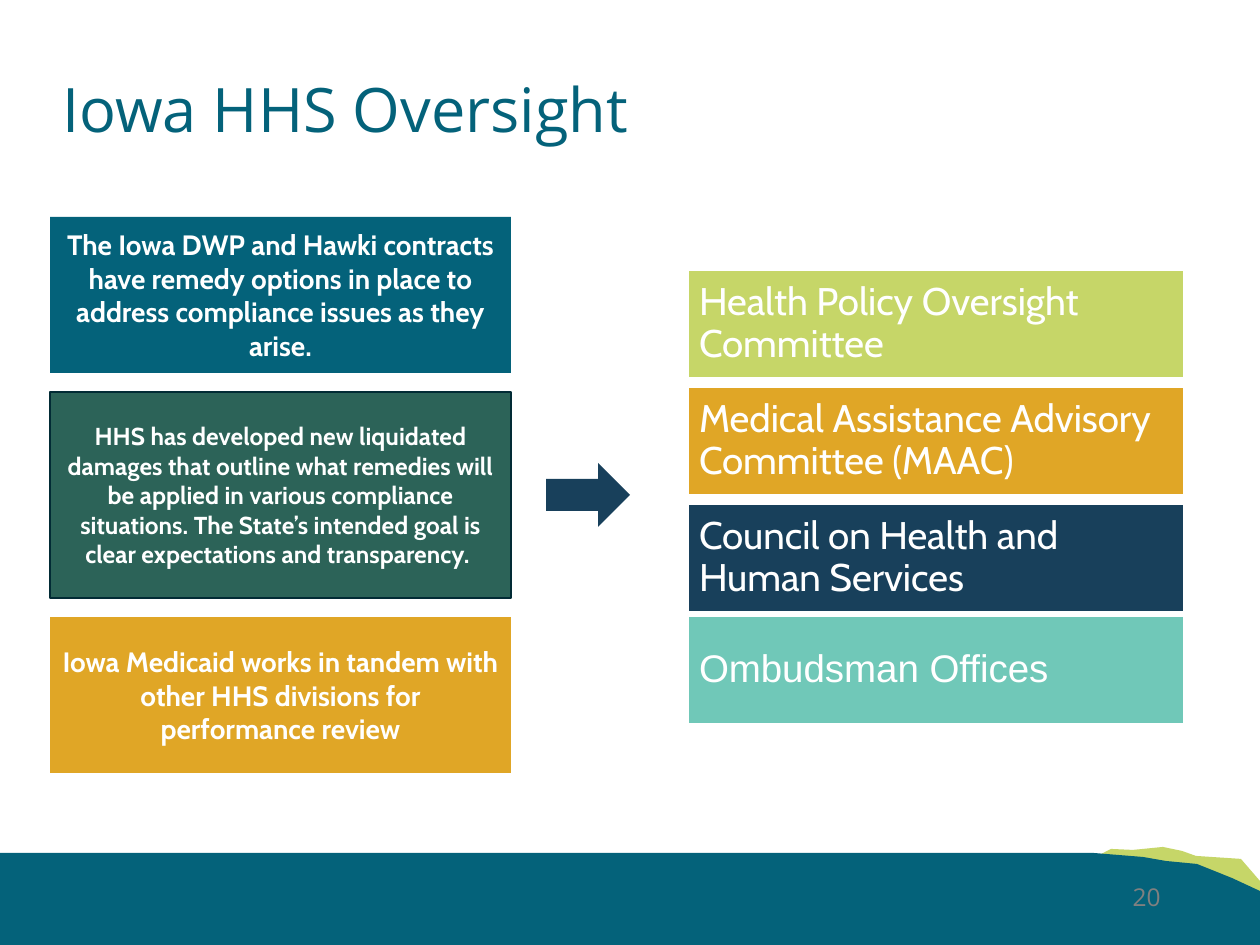
from pptx import Presentation
from pptx.dml.color import RGBColor
from pptx.enum.shapes import MSO_SHAPE
from pptx.enum.text import MSO_ANCHOR, PP_ALIGN
from pptx.util import Pt

SCALE = 914400 / 126  # EMU in one px
RECT, ARROW = MSO_SHAPE.RECTANGLE, MSO_SHAPE.RIGHT_ARROW
TOP, MIDDLE = MSO_ANCHOR.TOP, MSO_ANCHOR.MIDDLE
LEFT, CENTER, RIGHT = PP_ALIGN.LEFT, PP_ALIGN.CENTER, PP_ALIGN.RIGHT

COLORS = {
    "teal": "04627A", "green": "2C6358", "gold": "E0A626", "navy": "18405B",
    "lime": "C6D668", "mint": "70C8B8", "ink": "022B35", "gray": "808080",
    "white": "FFFFFF",
}


def emu(*px):
    return [round(v * SCALE) for v in px]


def color(name):
    return RGBColor.from_string(COLORS[name])


class Deck:
    def __init__(self, width, height):
        self.prs = Presentation()
        self.prs.slide_width, self.prs.slide_height = emu(width, height)
        self.slide = self.prs.slides.add_slide(self.prs.slide_layouts[6])
        self.shapes = self.slide.shapes

    def paint(self, shape, fill, line=None):
        shape.shadow.inherit = False
        shape.fill.solid()
        shape.fill.fore_color.rgb = color(fill)
        if line:
            shape.line.color.rgb = color(line)
            shape.line.width = Pt(1)
        else:
            shape.line.fill.background()

    def land(self, points, fill):
        start, *rest = points
        form = self.shapes.build_freeform(*start, scale=SCALE)
        form.add_line_segments(rest)
        self.paint(form.convert_to_shape(), fill)

    def block(self, box, fill, line=None, kind=RECT):
        shape = self.shapes.add_shape(kind, *emu(*box))
        self.paint(shape, fill, line)
        return shape

    def label(self, box, words, size, **style):
        self.letter(self.shapes.add_textbox(*emu(*box)), words, size, **style)

    def letter(self, shape, words, size, font="Cabin", ink="white", bold=False,
               align=LEFT, anchor=MIDDLE, space=1.0, pad=None):
        """Put styled words into a shape."""
        frame = shape.text_frame
        para = frame.paragraphs[0]
        para.text = words
        formats = [
            (frame, {"word_wrap": True, "vertical_anchor": anchor}),
            (para, {"alignment": align, "line_spacing": space}),
            (para.runs[0].font, {"name": font, "size": Pt(size), "bold": bold}),
        ]
        if pad is not None:
            sides = ("left", "top", "right", "bottom")
            formats.append((frame, {f"margin_{s}": emu(pad)[0] for s in sides}))
        for target, values in formats:
            for key, value in values.items():
                setattr(target, key, value)
        para.runs[0].font.color.rgb = color(ink)


HILL = [(1111, 849), (1086, 862), (1261, 896), (1260, 881), (1241, 859),
        (1196, 856), (1182, 851), (1163, 847), (1133, 850), (1111, 849)]
GROUND = [(0, 853), (1094, 853), (1143, 857), (1166, 861), (1197, 864),
          (1232, 878), (1260, 891), (1260, 945), (0, 945), (0, 853)]

ACTIONS = [
    (217, 156, "teal", None, 16,
     "The Iowa DWP and Hawki contracts have remedy options in place to "
     "address compliance issues as they arise."),
    (392, 206, "green", "ink", 14,
     "HHS has developed new liquidated damages that outline what remedies "
     "will be applied in various compliance situations. The State’s intended "
     "goal is clear expectations and transparency. "),
    (617, 156, "gold", None, 16,
     "Iowa Medicaid works in tandem with other HHS divisions for "
     "performance review"),
]
GROUPS = [
    (270, "lime", "Cabin", "Health Policy Oversight Committee"),
    (387, "gold", "Cabin", "Medical Assistance Advisory Committee (MAAC)"),
    (504, "navy", "Cabin", "Council on Health and Human Services"),
    (616, "mint", "Arial", "Ombudsman Offices"),
]


def main():
    deck = Deck(1260, 945)
    deck.land(HILL, "lime")
    deck.land(GROUND, "teal")
    deck.label((50, 47, 1057, 131), "Iowa HHS Oversight", 35,
               font="Open Sans", ink="teal", space=0.9)
    for top, height, fill, line, size, words in ACTIONS:
        shape = deck.block((50, top, 461, height), fill, line)
        deck.letter(shape, words, size, bold=True, align=CENTER)
    deck.block((546, 463, 84, 64), "navy", kind=ARROW)
    for top, fill, font, words in GROUPS:
        shape = deck.block((688, top, 496, 108), fill, "white")
        deck.letter(shape, words, 22, font=font, space=0.9, pad=11)
    deck.label((890, 876, 283, 50), "20", 14, font="Open Sans", ink="gray",
               align=RIGHT, anchor=TOP)
    deck.prs.save("out.pptx")


if __name__ == "__main__":
    main()
